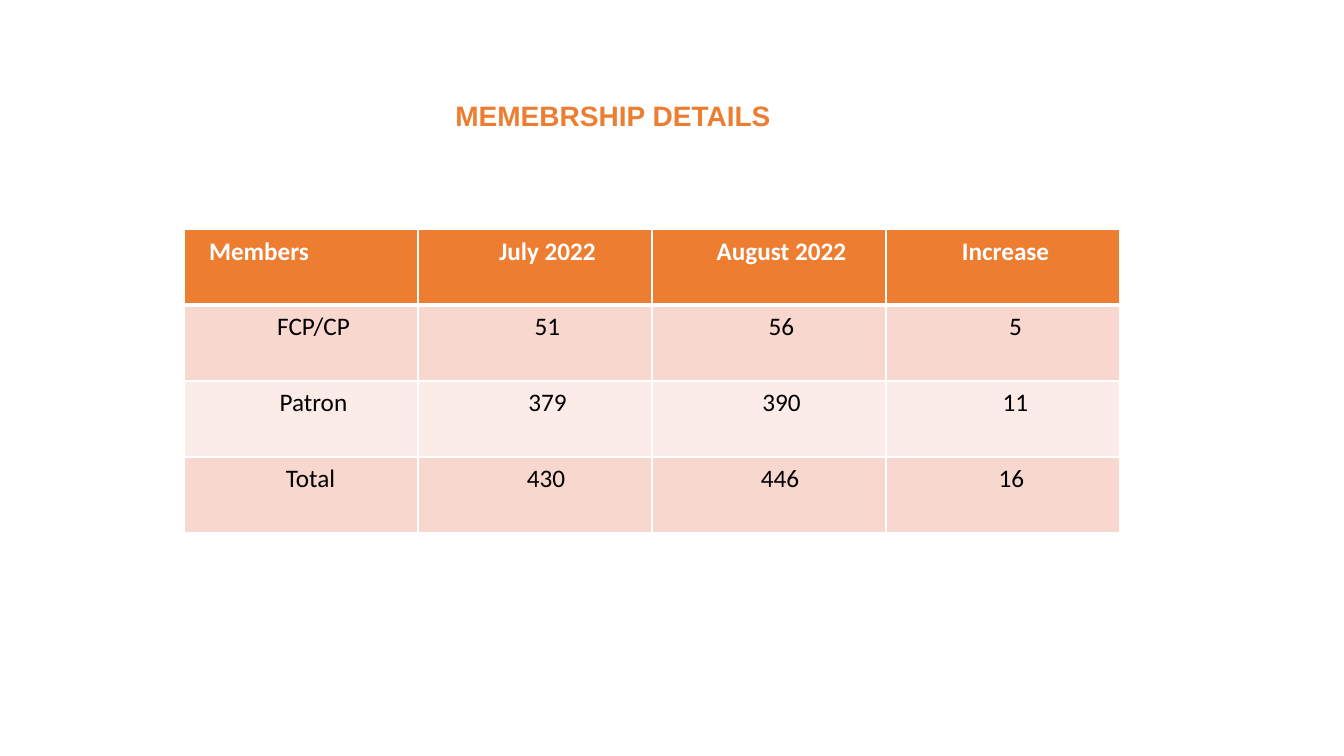
from lxml.etree import SubElement
from pptx import Presentation
from pptx.dml.color import RGBColor
from pptx.enum.text import MSO_ANCHOR, PP_ALIGN
from pptx.oxml.ns import qn
from pptx.util import Emu, Pt

EMU_PER_PX = 914400 / 100.8
ORANGE = RGBColor(0xED, 0x7D, 0x31)
PEACH = RGBColor(0xF8, 0xD7, 0xCE)
PALE = RGBColor(0xFC, 0xEC, 0xE8)
WHITE = RGBColor(0xFF, 0xFF, 0xFF)
BLACK = RGBColor(0x00, 0x00, 0x00)

ROWS = [
    ["Members", "July 2022", "August 2022", "Increase"],
    ["FCP/CP", "51", "56", "5"],
    ["Patron", "379", "390", "11"],
    ["Total", "430", "446", "16"],
]
# First-line indents in px, one per cell
INDENTS = [
    [25, 25, 25, 76],
    [25, 25, 25, 25],
    [25, 25, 25, 25],
    [19, 22, 22, 17],
]
LEFT_HEADINGS = ("Members", "Increase")


def px(n):
    return Emu(round(n * EMU_PER_PX))


class Deck:
    heading_font = "Arial"
    table_font = "Calibri"

    def __init__(self, width, height):
        self.prs = Presentation()
        self.prs.slide_width, self.prs.slide_height = px(width), px(height)
        self.s = self.prs.slides.add_slide(self.prs.slide_layouts[5])

    def format_text(self, p, font, size, color, bold):
        for r in p.runs:
            r.font.name, r.font.size, r.font.bold = font, Pt(size), bold
            r.font.color.rgb = color

    def title(self, text, x, y, w, h):
        sp = self.s.shapes.title
        sp.left, sp.top, sp.width, sp.height = px(x), px(y), px(w), px(h)
        tf = sp.text_frame
        tf.text = text
        tf.vertical_anchor = MSO_ANCHOR.MIDDLE
        p = tf.paragraphs[0]
        p.alignment, p.line_spacing = PP_ALIGN.CENTER, 0.9
        self.format_text(p, self.heading_font, 20, ORANGE, True)

    def border(self, cell, side, width):
        ln = SubElement(cell._tc.get_or_add_tcPr(), qn(f"a:ln{side}"), w=str(Pt(width)))
        fill = SubElement(ln, qn("a:solidFill"))
        SubElement(fill, qn("a:srgbClr"), val=str(WHITE))

    def cell(self, cell, text, indent, header, fill, top_width):
        cell.text = text
        cell.margin_left = cell.margin_right = cell.margin_bottom = 0
        cell.margin_top = px(20 if header else 19)
        for side in "LRTB":
            width = {"T": top_width, "B": 3 if header else 1}.get(side, 1)
            self.border(cell, side, width)
        cell.fill.solid()
        cell.fill.fore_color.rgb = fill
        p = cell.text_frame.paragraphs[0]
        p.alignment = PP_ALIGN.LEFT if text in LEFT_HEADINGS else PP_ALIGN.CENTER
        p.line_spacing = Pt(12.8)
        pPr = p._p.get_or_add_pPr()
        pPr.set("marL", "0")
        pPr.set("indent", str(px(indent)))
        self.format_text(p, self.table_font, 18, WHITE if header else BLACK, header)

    def table(self, rows, indents, x, y, col_w, row_h):
        n_rows, n_cols = len(rows), len(rows[0])
        table = self.s.shapes.add_table(
            n_rows, n_cols, px(x), px(y), px(col_w * n_cols), px(row_h * n_rows)
        ).table
        for i, row in enumerate(rows):
            fill = ORANGE if i == 0 else PEACH if i % 2 else PALE
            for j, text in enumerate(row):
                self.cell(table.cell(i, j), text, indents[i][j], i == 0, fill,
                          3 if i == 1 else 1)


def main():
    deck = Deck(1344, 756)
    deck.title("MEMEBRSHIP DETAILS", 81, 80, 1064, 75)
    deck.table(ROWS, INDENTS, x=184, y=229, col_w=234, row_h=76)
    deck.prs.save("out.pptx")


if __name__ == "__main__":
    main()
